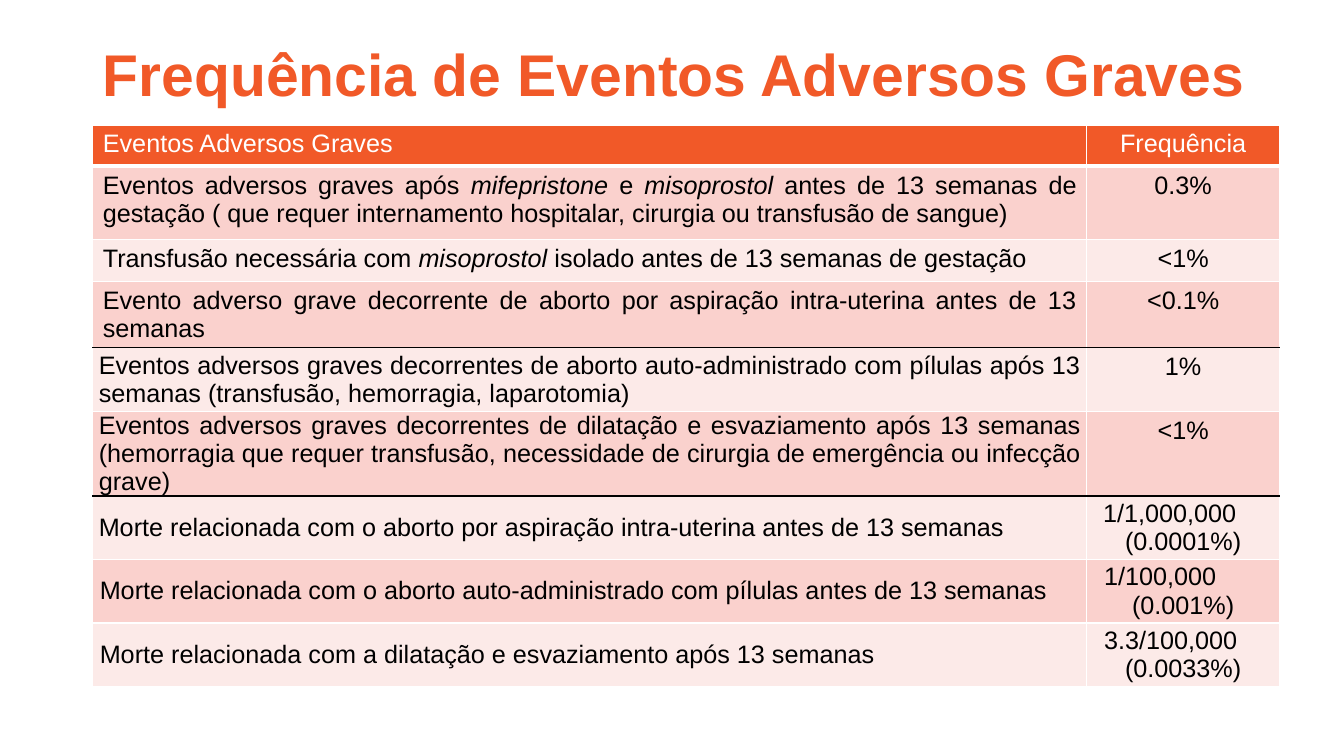
from dataclasses import dataclass
from typing import Any

from lxml import etree
from pptx import Presentation
from pptx.dml.color import RGBColor
from pptx.enum import text as text_enum
from pptx.oxml import ns
from pptx.util import Inches, Pt

ORANGE, ROSE, PALE_ROSE = "F15928", "FAD1CD", "FCEAE8"
WHITE, BLACK = "FFFFFF", "000000"
ALIGN, ANCHOR = text_enum.PP_ALIGN, text_enum.MSO_ANCHOR
LEFT, WIDTH = 0.92, 11.77
COLUMN_WIDTHS = (9.86, 1.91)
SIDES = ("L", "R", "T", "B")


@dataclass
class Event:
    """One table row; asterisks enclose italic words in the description."""
    description: str
    frequency: tuple[str, ...]
    height: float
    inset: float = 0.1
    frequency_inset: float = 0.1
    line_above: bool = False


HEADER = Event("Eventos Adversos Graves", ("Frequência",), 0.41)
EVENTS = [
    Event("Eventos adversos graves após *mifepristone* e *misoprostol* antes de 13 semanas "
          "de gestação ( que requer internamento hospitalar, cirurgia ou transfusão de sangue)",
          ("0.3%",), 0.73),
    Event("Transfusão necessária com *misoprostol* isolado antes de 13 semanas de gestação",
          ("<1%",), 0.41),
    Event("Evento adverso grave decorrente de aborto por aspiração intra-uterina antes de "
          "13 semanas", ("<0.1%",), 0.65),
    Event("Eventos adversos graves decorrentes de aborto auto-administrado com pílulas após "
          "13 semanas (transfusão, hemorragia, laparotomia)",
          ("1%",), 0.63, 0.06, line_above=True),
    Event("Eventos adversos graves decorrentes de dilatação e esvaziamento após 13 semanas "
          "(hemorragia que requer transfusão, necessidade de cirurgia de emergência ou "
          "infecção grave)", ("<1%",), 0.82, 0.06),
    Event("Morte relacionada com o aborto por aspiração intra-uterina antes de 13 semanas",
          ("1/1,000,000", "(0.0001%)"), 0.63, 0.06, 0.06, line_above=True),
    Event("Morte relacionada com o aborto auto-administrado com pílulas antes de 13 semanas",
          ("1/100,000", "(0.001%)"), 0.63, 0.07, 0.07),
    Event("Morte relacionada com a dilatação e esvaziamento após 13 semanas",
          ("3.3/100,000", "(0.0033%)"), 0.63, 0.07, 0.07),
]


def color(value: str) -> RGBColor:
    return RGBColor.from_string(value)


def apply(target: Any, values: dict[str, Any]) -> None:
    """Set every attribute named in values on the target."""
    for name, value in values.items():
        setattr(target, name, value)


def write(paragraph: Any, content: str, size: float, font_color: str,
          bold: bool = False) -> None:
    """Add runs to a paragraph, italic between asterisks."""
    for index, part in enumerate(content.split("*")):
        run = paragraph.add_run()
        run.text = part
        apply(run.font, {"name": "Arial", "size": Pt(size), "bold": bold,
                         "italic": index % 2 == 1})
        run.font.color.rgb = color(font_color)


def add_border(cell: Any, side: str, line_color: str, width: float) -> None:
    line = etree.SubElement(cell._tc.get_or_add_tcPr(), ns.qn(f"a:ln{side}"),
                            w=str(Pt(width)))
    fill = etree.SubElement(line, ns.qn("a:solidFill"))
    etree.SubElement(fill, ns.qn("a:srgbClr"), val=line_color)


def format_cell(cell: Any, inset: float, fill: str,
                borders: dict[str, tuple[str, float]]) -> None:
    """Set insets, anchor, borders and fill; narrow insets go with middle anchor."""
    roomy = inset == 0.1
    vertical = Inches(0.05 if roomy else 0)
    apply(cell, {"margin_left": Inches(inset), "margin_right": Inches(inset),
                 "margin_top": vertical, "margin_bottom": vertical,
                 "vertical_anchor": ANCHOR.TOP if roomy else ANCHOR.MIDDLE})
    for side in SIDES:
        add_border(cell, side, *borders.get(side, (WHITE, 1)))
    cell.fill.solid()
    cell.fill.fore_color.rgb = color(fill)


def write_frequency(cell: Any, lines: tuple[str, ...], font_color: str) -> None:
    """Centre the last line; a line before it is indented from the left."""
    frame = cell.text_frame
    for index, line in enumerate(lines):
        paragraph = frame.add_paragraph() if index else frame.paragraphs[0]
        paragraph.alignment = ALIGN.CENTER
        if index < len(lines) - 1:
            paragraph.alignment = ALIGN.LEFT
            paragraph._p.get_or_add_pPr().set("marL", str(Inches(0.1)))
        write(paragraph, line, 18, font_color)


def add_title(slide: Any, content: str) -> None:
    title = slide.shapes.title
    apply(title, {"left": Inches(LEFT), "top": Inches(0.4),
                  "width": Inches(WIDTH), "height": Inches(1.45)})
    apply(title.text_frame, {"word_wrap": True, "vertical_anchor": ANCHOR.TOP,
                             "auto_size": text_enum.MSO_AUTO_SIZE.NONE})
    paragraph = title.text_frame.paragraphs[0]
    apply(paragraph, {"alignment": ALIGN.LEFT, "line_spacing": 0.9})
    write(paragraph, content, 42, ORANGE, bold=True)


def add_event_table(slide: Any) -> None:
    rows = [HEADER, *EVENTS]
    height = sum(event.height for event in rows)
    table = slide.shapes.add_table(len(rows), len(COLUMN_WIDTHS), Inches(LEFT),
                                   Inches(1.24), Inches(WIDTH), Inches(height)).table
    table.horz_banding = False
    for column, width in zip(table.columns, COLUMN_WIDTHS):
        column.width = Inches(width)
    for index, event in enumerate(rows):
        table.rows[index].height = Inches(event.height)
        is_header = index == 0
        fill = ORANGE if is_header else ROSE if index % 2 else PALE_ROSE
        font_color = WHITE if is_header else BLACK
        borders = {}
        if is_header:
            borders["B"] = (WHITE, 3)
        if event.line_above:
            borders["T"] = (BLACK, 1)
        if index + 1 < len(rows) and rows[index + 1].line_above:
            borders["B"] = (BLACK, 1)
        description, frequency = table.cell(index, 0), table.cell(index, 1)
        format_cell(description, event.inset, fill, borders)
        format_cell(frequency, event.frequency_inset, fill, borders)
        paragraph = description.text_frame.paragraphs[0]
        paragraph.alignment = ALIGN.LEFT if is_header else ALIGN.JUSTIFY
        write(paragraph, event.description, 18, font_color)
        write_frequency(frequency, event.frequency, font_color)


def main() -> None:
    presentation = Presentation()
    apply(presentation, {"slide_width": Inches(13.33), "slide_height": Inches(7.5)})
    slide = presentation.slides.add_slide(presentation.slide_layouts[5])
    add_title(slide, "Frequência de Eventos Adversos Graves")
    add_event_table(slide)
    presentation.save("out.pptx")


if __name__ == "__main__":
    main()
